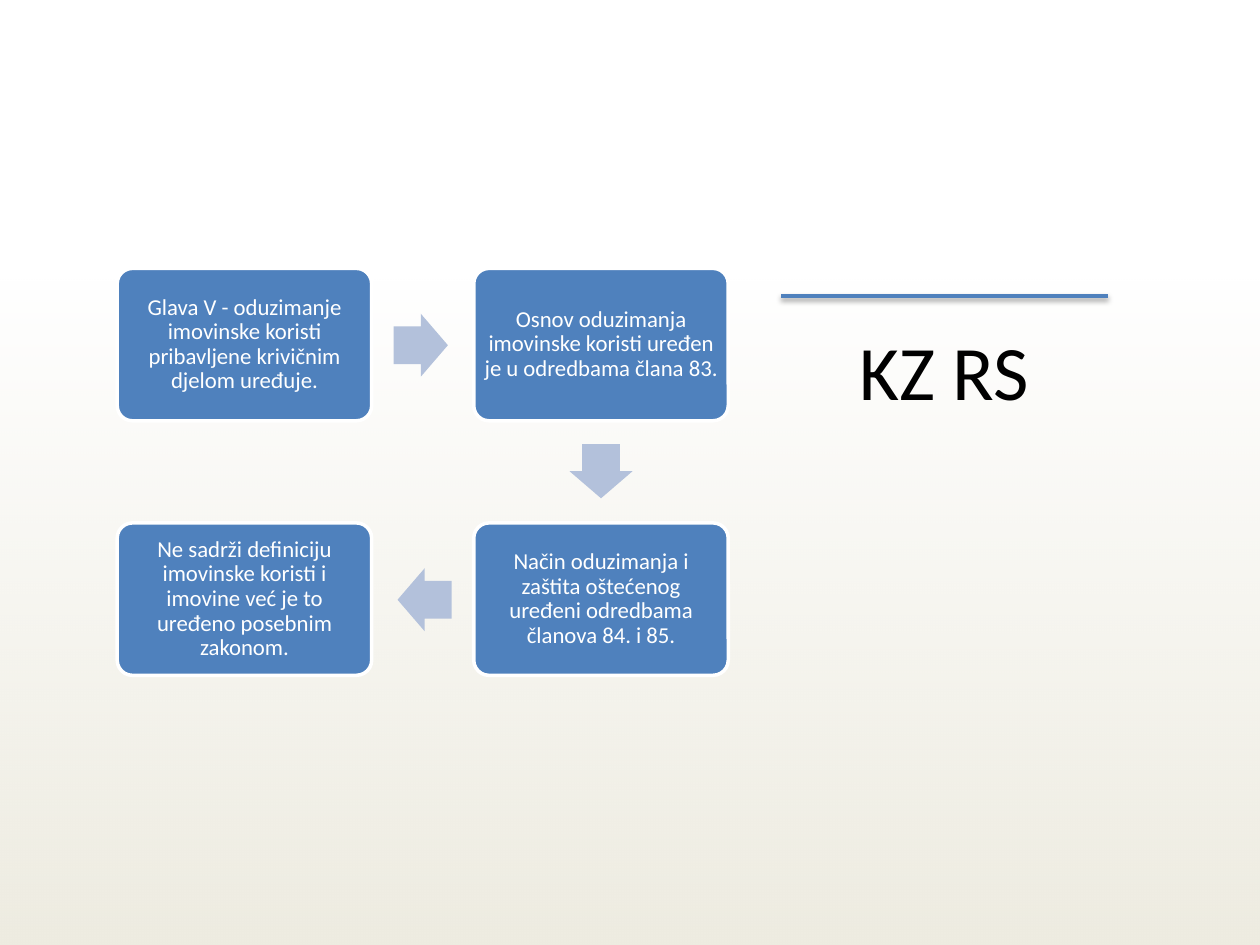
from lxml import etree
from pptx import Presentation
from pptx.dml.color import RGBColor
from pptx.enum.shapes import MSO_CONNECTOR, MSO_SHAPE
from pptx.enum.text import MSO_ANCHOR, PP_ALIGN
from pptx.oxml.ns import qn
from pptx.util import Inches, Pt

RECT, ROUND, ARROW = MSO_SHAPE.RECTANGLE, MSO_SHAPE.ROUNDED_RECTANGLE, MSO_SHAPE.RIGHT_ARROW
STRAIGHT = MSO_CONNECTOR.STRAIGHT
TOP, MIDDLE = MSO_ANCHOR.TOP, MSO_ANCHOR.MIDDLE
CENTER = PP_ALIGN.CENTER

BLUE, PALE, CREAM, WHITE, BLACK = "4F81BD", "B3C1DB", "EEECE1", "FFFFFF", "000000"
BOX_W, BOX_H = 2.02, 1.21
LEFT, UPPER = 0.93, 2.13
STEP_X, STEP_Y = 2.83, 2.02
ARROW_W, ARROW_H = 0.43, 0.5
SIDE_X, SIDE_W = 6.2, 2.59

# Each step: column, row, text
STEPS = [
    (0, 0, "Glava V - oduzimanje imovinske koristi pribavljene krivičnim djelom uređuje."),
    (1, 0, "Osnov oduzimanja imovinske koristi uređen je u odredbama člana 83."),
    (1, 1, "Način oduzimanja i zaštita oštećenog uređeni odredbama članova 84. i 85."),
    (0, 1, "Ne sadrži definiciju imovinske koristi i imovine već je to uređeno posebnim zakonom."),
]
# Each arrow: centre x, centre y, turn
ARROWS = [(3.34, 2.74, 0), (4.77, 3.74, 90), (3.37, 4.76, 180)]


def color(code):
    """Return the colour for a hex string."""
    return RGBColor.from_string(code)


def write(shape, text, size, ink, anchor=MIDDLE, inset=None, spacing=None):
    """Put centred Calibri text in a shape."""
    frame = shape.text_frame
    frame.word_wrap = True
    frame.vertical_anchor = anchor
    if inset is not None:
        frame.margin_left = frame.margin_right = Inches(inset)
        frame.margin_top = frame.margin_bottom = Inches(inset)
    para = frame.paragraphs[0]
    para.alignment = CENTER
    para.line_spacing = spacing
    run = para.add_run()
    run.text = text
    run.font.name = "Calibri"
    run.font.size = Pt(size)
    run.font.color.rgb = color(ink)


def add_form(slide, kind, x, y, w, h, fill=None):
    """Add a plain preset shape with no line or shadow."""
    shape = slide.shapes.add_shape(kind, Inches(x), Inches(y), Inches(w), Inches(h))
    shape.shadow.inherit = False
    shape.line.fill.background()
    if fill:
        shape.fill.solid()
        shape.fill.fore_color.rgb = color(fill)
    return shape


def add_fade(slide):
    """Add the cream band that fades out towards its top."""
    band = add_form(slide, RECT, 0, 2.21, 10, 5.29)
    band.fill.gradient()
    band.fill.gradient_angle = 270
    for stop, place in zip(band.fill.gradient_stops, (0, 1)):
        stop.color.rgb = color(CREAM)
        stop.position = place
    first = next(band._element.iter(qn("a:srgbClr")))
    etree.SubElement(first, qn("a:alpha"), val="0")


def add_title(slide, text):
    """Move and fill the title placeholder."""
    title = slide.shapes.title
    title.left, title.top = Inches(SIDE_X), Inches(2.52)
    title.width, title.height = Inches(SIDE_W), Inches(4.1)
    write(title, text, 44, BLACK, anchor=TOP)


def add_rule(slide):
    """Add the blue rule with a soft shadow below it."""
    y = Inches(2.35)
    rule = slide.shapes.add_connector(STRAIGHT, Inches(SIDE_X), y, Inches(SIDE_X + SIDE_W), y)
    rule.line.color.rgb = color(BLUE)
    rule.line.width = Pt(2.5)
    effects = etree.SubElement(rule._element.spPr, qn("a:effectLst"))
    shadow = etree.SubElement(effects, qn("a:outerShdw"), blurRad=str(Pt(3.1)),
                              dist=str(Pt(1.8)), dir="5400000", rotWithShape="0")
    tint = etree.SubElement(shadow, qn("a:srgbClr"), val=BLACK)
    etree.SubElement(tint, qn("a:alpha"), val="35000")


def add_step(slide, col, row, text):
    """Add one rounded step box on the grid."""
    box = add_form(slide, ROUND, LEFT + col * STEP_X, UPPER + row * STEP_Y, BOX_W, BOX_H, BLUE)
    box.adjustments[0] = 0.1
    box.line.color.rgb = color(WHITE)
    box.line.width = Pt(2)
    write(box, text, 13, WHITE, inset=0.05, spacing=0.9)


def add_arrow(slide, x, y, turn):
    """Add a block arrow around a centre point."""
    arrow = add_form(slide, ARROW, x - ARROW_W / 2, y - ARROW_H / 2, ARROW_W, ARROW_H, PALE)
    arrow.adjustments[0] = 0.6
    arrow.adjustments[1] = 0.5
    arrow.rotation = turn


def main():
    """Build and save the slide."""
    deck = Presentation()
    deck.slide_width, deck.slide_height = Inches(10), Inches(7.5)
    slide = deck.slides.add_slide(deck.slide_layouts[5])
    slide.background.fill.solid()
    slide.background.fill.fore_color.rgb = color(WHITE)
    add_fade(slide)
    add_title(slide, "KZ RS")
    add_rule(slide)
    for step in STEPS:
        add_step(slide, *step)
    for arrow in ARROWS:
        add_arrow(slide, *arrow)
    # The title sits above the band
    slide.shapes._spTree.append(slide.shapes.title._element)
    deck.save("out.pptx")


if __name__ == "__main__":
    main()
